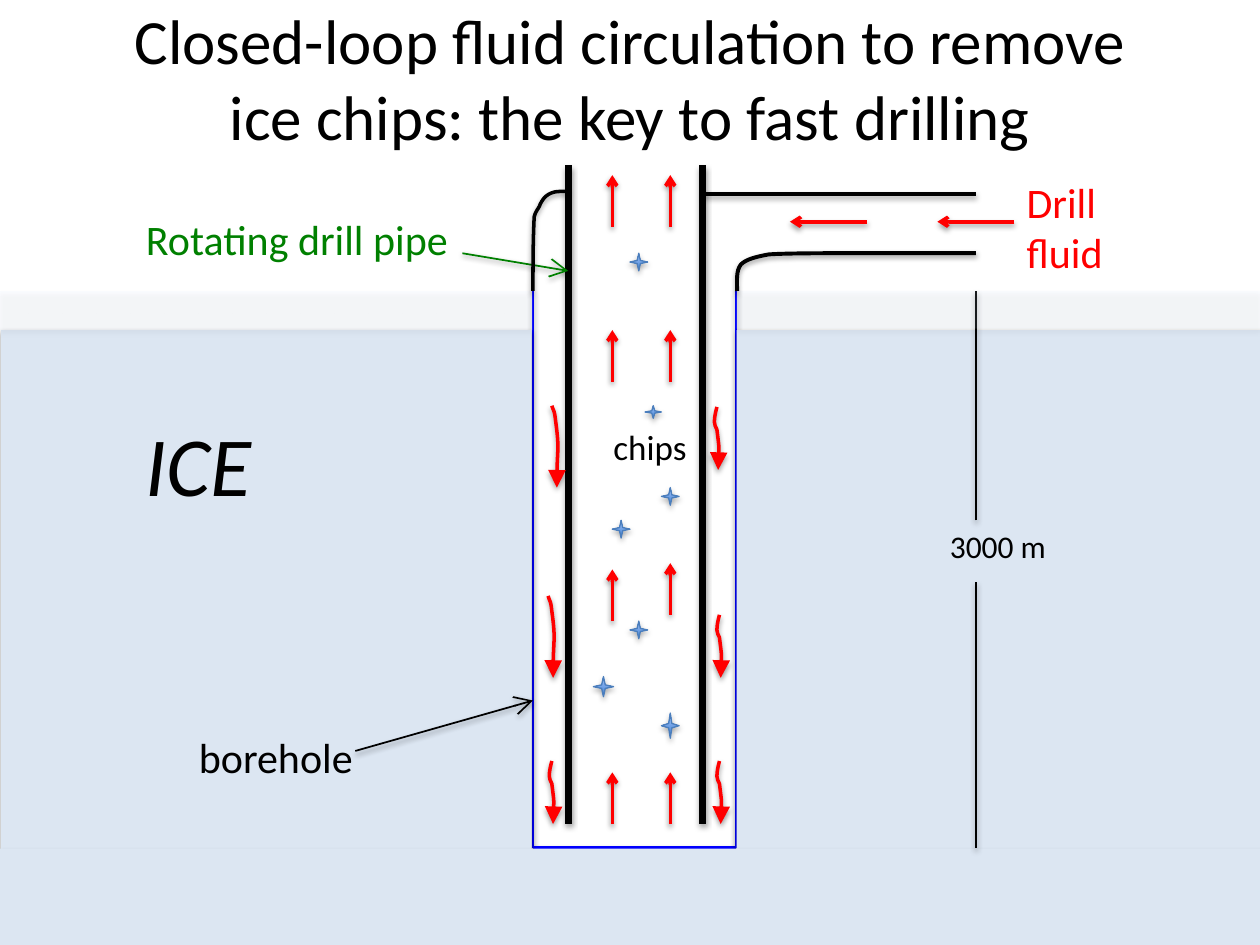
from lxml.etree import SubElement
from pptx import Presentation
from pptx.dml.color import RGBColor
from pptx.enum.shapes import MSO_CONNECTOR, MSO_SHAPE
from pptx.enum.text import MSO_ANCHOR, PP_ALIGN
from pptx.oxml.ns import qn
from pptx.util import Inches, Pt

COLORS = {
    "black": "000000", "flow": "FF0000", "hole": "0000FF", "pipe": "008000",
    "ice": "DCE6F2", "snow": "D5E5FF", "chip_edge": "4B7EBC",
    "chip_dark": "3F80CE", "chip_light": "A4C4FF",
}
RGB = {name: RGBColor.from_string(value) for name, value in COLORS.items()}

deck = Presentation()
CELL = Inches(0.1)
deck.slide_width, deck.slide_height = 100 * CELL, 75 * CELL
page = deck.slides.add_slide(deck.slide_layouts[6])
shapes = page.shapes


def finish(shape, color=None, width=1, arrow=None, head="med", shade=38):
    if color:
        shape.line.color.rgb = RGB[color]
        shape.line.width = Pt(width)
    else:
        shape.line.fill.background()
    if arrow:
        SubElement(shape.line._get_or_add_ln(), qn("a:tailEnd"), type=arrow, w=head, len=head)
    effects = SubElement(shape._element.spPr, qn("a:effectLst"))
    shadow = SubElement(effects, qn("a:outerShdw"), blurRad=str(Pt(3.1)),
                        dist=str(Pt(1.7)), dir="5400000", rotWithShape="0")
    tint = SubElement(shadow, qn("a:srgbClr"), val=COLORS["black"])
    SubElement(tint, qn("a:alpha"), val=str(shade * 1000))


def draw_curve(start, bends, color, width, arrow=None):
    knots = [start] + [knot for bend in bends for knot in bend]
    grid = [(round(x * CELL), round(y * CELL)) for x, y in knots]
    builder = shapes.build_freeform(*grid[0], scale=1.0)
    builder.add_line_segments(grid[1:], close=False)
    outline = builder.convert_to_shape()
    segments = list(outline._element.iter(qn("a:lnTo")))
    track = segments[0].getparent()
    for first in range(0, len(segments), 3):
        cubic = SubElement(track, qn("a:cubicBezTo"))
        for segment in segments[first:first + 3]:
            cubic.append(segment[0])
            track.remove(segment)
    outline.fill.background()
    finish(outline, color, width, arrow, "lg")


HOLE_LEFT, HOLE_RIGHT, HOLE_TOP, HOLE_END = 42.3, 58.4, 23.1, 67.3
PIPE_LEFT, PIPE_RIGHT, PIPE_TOP, PIPE_END = 45.1, 55.75, 13.1, 65.4
DEPTH = 77.45

walls = [
    (HOLE_LEFT, HOLE_TOP, HOLE_LEFT, HOLE_END, "hole", 1, None, None),
    (HOLE_LEFT, HOLE_END, HOLE_RIGHT, HOLE_END, "hole", 2, None, None),
    (HOLE_RIGHT, HOLE_TOP, HOLE_RIGHT, HOLE_END, "hole", 1, None, None),
    (PIPE_LEFT, PIPE_TOP, PIPE_LEFT, PIPE_END, "black", 4, None, None),
    (PIPE_RIGHT, PIPE_TOP, PIPE_RIGHT, PIPE_END, "black", 4, None, None),
]
details = [
    (PIPE_RIGHT, 15.4, DEPTH, 15.4, "black", 2, None, None),
    (DEPTH, 41.3, DEPTH, HOLE_TOP, "black", 1, None, None),
    (DEPTH, HOLE_END, DEPTH, 46.2, "black", 1, None, None),
    (28.2, 59.6, HOLE_LEFT, 55.6, "black", 1, "arrow", "lg"),
    (36.7, 20.1, PIPE_LEFT, 21.5, "pipe", 1, "arrow", "lg"),
]
for right in (80.5, 68.8):
    details.append((right, 17.6, right - 6.1, 17.6, "flow", 2, "arrow", "med"))
for x, third in ((48.6, 49.3), (53.2, 48.8)):
    for y in (18, 30.3, third, PIPE_END):
        details.append((x, y, x, y - 4.1, "flow", 2, "arrow", "med"))

blocks = [
    (0.1, 26.2, 42.1, 48.8, "ice", 100),
    (58.47, 26.2, 42.1, 48.8, "ice", 100),
    (0, 67.35, 100, 9.3, "ice", 100),
    (0, HOLE_TOP, HOLE_LEFT, 3.1, "snow", 10),
    (HOLE_RIGHT, HOLE_TOP, 41.6, 3, "snow", 11),
]

for lines, layer in ((walls, blocks[:3]), (details, blocks[3:])):
    for x1, y1, x2, y2, color, width, arrow, head in lines:
        ends = [round(value * CELL) for value in (x1, y1, x2, y2)]
        line = shapes.add_connector(MSO_CONNECTOR.STRAIGHT, *ends)
        finish(line, color, width, arrow, head)
    for *place, color, opacity in layer:
        block = shapes.add_shape(MSO_SHAPE.RECTANGLE, *[round(v * CELL) for v in place])
        block.fill.solid()
        block.fill.fore_color.rgb = RGB[color]
        if opacity < 100:
            tint = block._element.spPr.find(qn("a:solidFill"))[0]
            SubElement(tint, qn("a:alpha"), val=str(opacity * 1000))
        finish(block, shade=35)

draw_curve((HOLE_LEFT, HOLE_TOP), [
    ((42.3, 21.1), (42.3, 19.1), (42.4, 17.2)),
    ((42.5, 16.8), (42.7, 16.6), (42.8, 16.4)),
    ((42.9, 16.1), (43.1, 15.8), (43.3, 15.6)),
    ((43.9, 15.1), (44.5, 15.2), (45.1, 15.2)),
], "black", 2)
draw_curve((58.5, HOLE_TOP), [
    ((58.5, 22.3), (58.4, 21.5), (58.8, 21)),
    ((59.2, 20.6), (59.9, 20.4), (61, 20.2)),
    ((62.2, 20.1), (65.9, 20.1), (65.9, 20.1)),
    ((65.9, 20.1), (DEPTH, 20.1), (DEPTH, 20.1)),
], "black", 2.25)

long_bend = [((0.2, 0.6), (0.2, 0.3), (0.3, 1.2)), ((0.6, 3.4), (0.4, 3.4), (0.4, 6.5))]
short_bend = [
    ((-0.1, 0.4), (-0.2, 0.8), (-0.2, 1.2)),
    ((-0.2, 1.4), (-0.1, 1.6), (0, 1.8)),
    ((0, 2.1), (0.1, 2.3), (0.1, 2.6)),
    ((0.2, 3.4), (0.1, 4.2), (0.1, 5)),
]
for x, y, bends in [
    (43.5, 47.3, long_bend), (43.8, 32.2, long_bend), (56.9, 32.3, short_bend),
    (57.1, 48.8, short_bend), (57.1, 60.4, short_bend), (43.8, 60.4, short_bend),
]:
    moved = [[(x + dx, y + dy) for dx, dy in bend] for bend in bends]
    draw_curve((x, y), moved, "flow", 2, "triangle")

for place in [
    (48.6, 41.3, 1.4, 1.4), (52.5, 38.7, 1.4, 1.4), (50, 49.3, 1.4, 1.4),
    (47.1, 53.7, 1.6, 1.6), (52.5, 56.6, 1.4, 2), (50, 20.1, 1.4, 1.4),
    (51.2, 32.2, 1.3, 1),
]:
    chip = shapes.add_shape(MSO_SHAPE.STAR_4_POINT, *[round(v * CELL) for v in place])
    chip.fill.gradient()
    chip.fill.gradient_angle = 90
    for stop, color in zip(chip.fill.gradient_stops, ("chip_dark", "chip_light")):
        stop.color.rgb = RGB[color]
    finish(chip, "chip_edge", 0.75, shade=35)

for words, place, size, color, extra in [
    ("Closed-loop fluid circulation to remove ice chips: the key to fast drilling",
     (7.5, 2.15, 85, 8), 36, "black", {}),
    ("ICE", (10.6, 32.25, 19.6, 9.1), 48, "black", {"italic": True}),
    ("3000 m", (74.4, 41.3, 18.1, 4), 18, "black", {}),
    ("borehole", (14.8, 57.6, 17.8, 5), 24, "black", {}),
    ("chips", (47.7, 33.3, 8, 4.4), 20, "black", {}),
    ("Rotating drill pipe", (10.6, 16.45, 28.5, 5), 24, "pipe", {}),
    ("Drill fluid", (80.5, 13.5, 14, 9.1), 24, "flow", {}),
]:
    box = shapes.add_textbox(*[round(v * CELL) for v in place])
    box.text_frame.word_wrap = True
    para = box.text_frame.paragraphs[0]
    if size == 36:
        box.text_frame.vertical_anchor = MSO_ANCHOR.MIDDLE
        para.alignment = PP_ALIGN.CENTER
    span = para.add_run()
    span.text = words
    span.font.color.rgb = RGB[color]
    for name, value in {"name": "Calibri", "size": Pt(size), **extra}.items():
        setattr(span.font, name, value)

deck.save("out.pptx")
